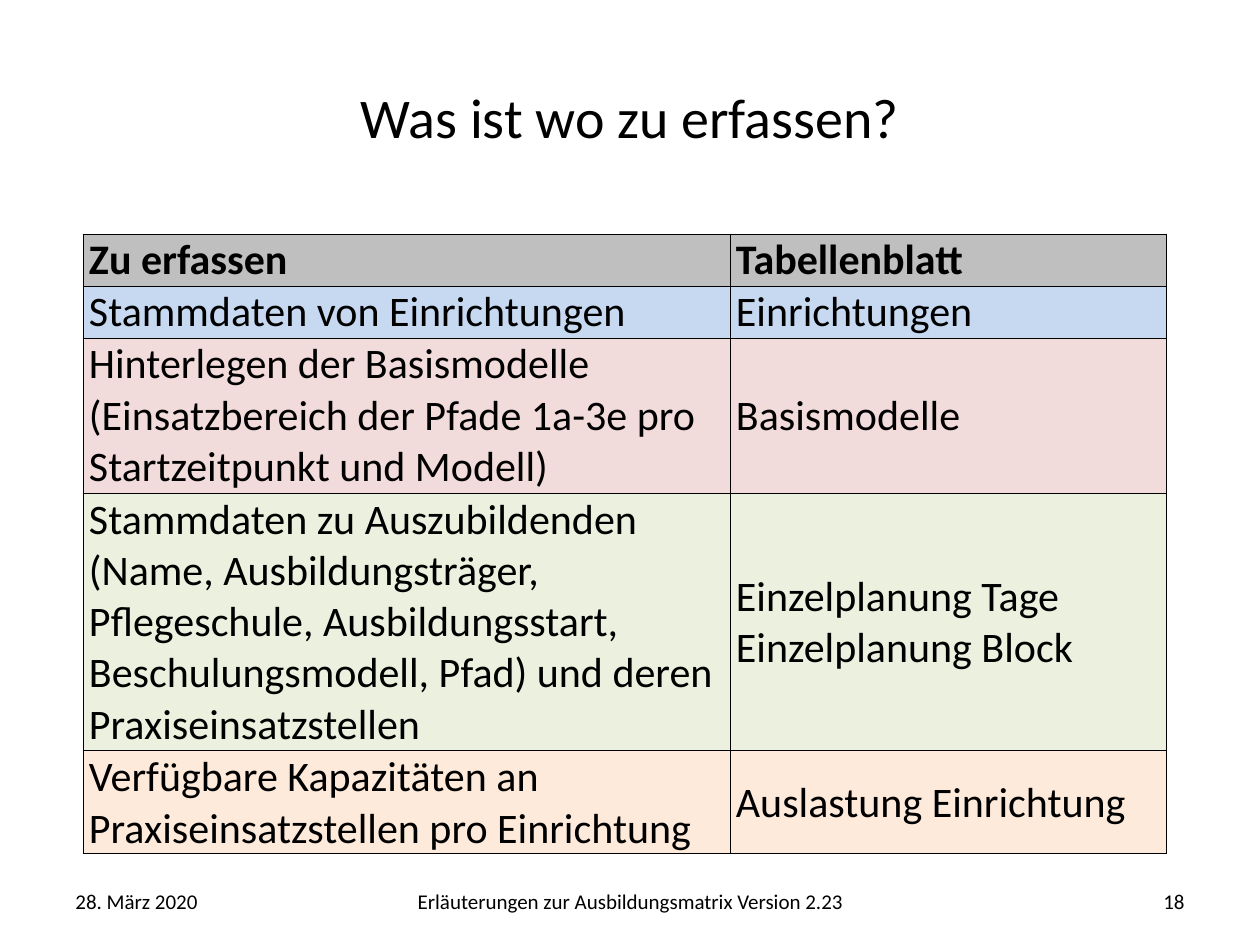
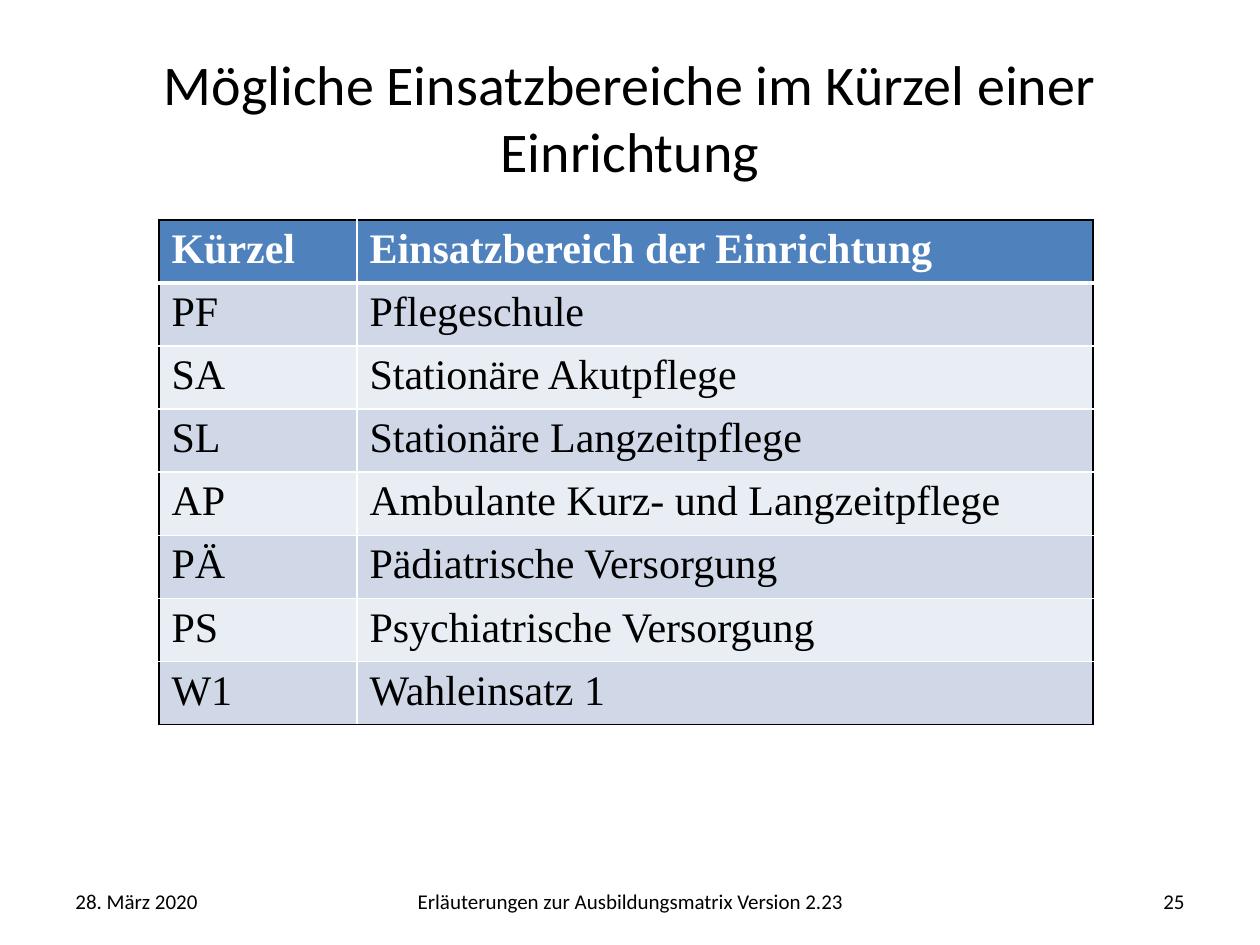
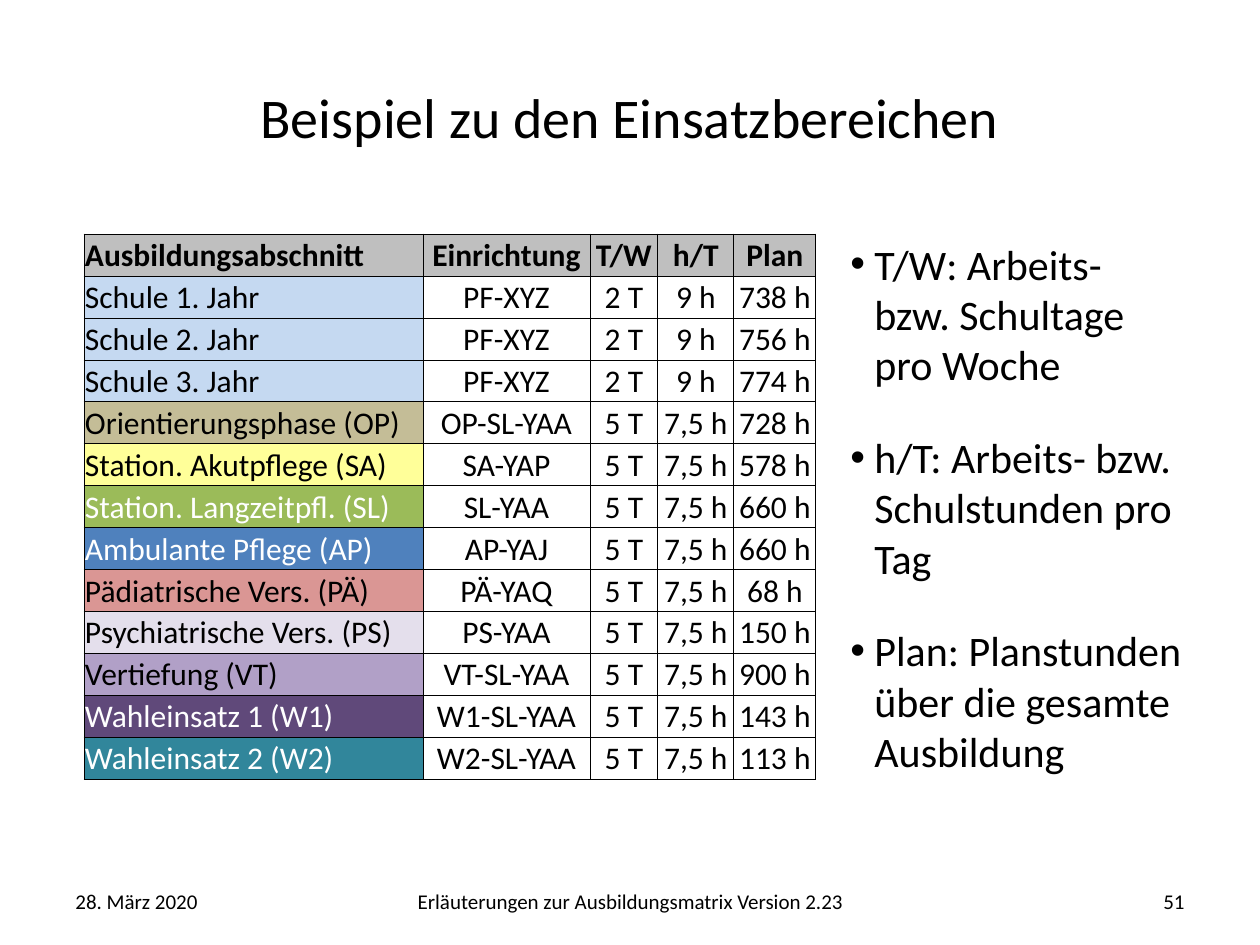
from lxml import etree
from pptx import Presentation
from pptx.dml.color import RGBColor
from pptx.enum.text import MSO_ANCHOR, PP_ALIGN
from pptx.oxml.ns import qn
from pptx.util import Pt

PX = 914400 / 126
LEFT, MID, RIGHT = PP_ALIGN.LEFT, PP_ALIGN.CENTER, PP_ALIGN.RIGHT
TOP, CENTER = MSO_ANCHOR.TOP, MSO_ANCHOR.MIDDLE

SANS, SERIF = "Calibri", "Times New Roman"
BLACK = RGBColor(0x00, 0x00, 0x00)
WHITE = RGBColor(0xFF, 0xFF, 0xFF)
GREY = RGBColor(0xBF, 0xBF, 0xBF)
BLUE = RGBColor(0x4F, 0x81, 0xBD)
SKY = RGBColor(0xC6, 0xD9, 0xF1)
ICE = RGBColor(0xC5, 0xD9, 0xF1)
ROSE = RGBColor(0xF2, 0xDC, 0xDB)
MINT = RGBColor(0xEB, 0xF1, 0xDE)
PEACH = RGBColor(0xFD, 0xEA, 0xDA)
STEEL = RGBColor(0xD0, 0xD8, 0xE8)
MIST = RGBColor(0xE9, 0xED, 0xF4)
SAND = RGBColor(0xC4, 0xBD, 0x97)
LEMON = RGBColor(0xFF, 0xFF, 0x99)
GREEN = RGBColor(0x9B, 0xBB, 0x59)
CORAL = RGBColor(0xDA, 0x96, 0x94)
LILAC = RGBColor(0xE4, 0xDF, 0xEC)
MAUVE = RGBColor(0xB1, 0xA0, 0xC7)
PLUM = RGBColor(0x60, 0x49, 0x7A)
TEAL = RGBColor(0x31, 0x86, 0x9B)
DARK = (GREEN, BLUE, PLUM, TEAL)

DATE = "28. März 2020"
FOOTER = "Erläuterungen zur Ausbildungsmatrix Version 2.23"

SHEETS = [
    ("Zu erfassen", "Tabellenblatt", GREY, 52),
    ("Stammdaten von Einrichtungen", "Einrichtungen", SKY, 52),
    ("Hinterlegen der Basismodelle (Einsatzbereich der Pfade 1a-3e pro "
     "Startzeitpunkt und Modell)", "Basismodelle", ROSE, 155),
    ("Stammdaten zu Auszubildenden (Name, Ausbildungsträger, Pflegeschule, "
     "Ausbildungsstart, Beschulungsmodell, Pfad) und deren "
     "Praxiseinsatzstellen",
     "Einzelplanung Tage\nEinzelplanung Block", MINT, 258),
    ("Verfügbare Kapazitäten an Praxiseinsatzstellen pro Einrichtung",
     "Auslastung Einrichtung", PEACH, 103),
]

CODES = [
    ("Kürzel", "Einsatzbereich der Einrichtung"),
    ("PF", "Pflegeschule"),
    ("SA", "Stationäre Akutpflege"),
    ("SL", "Stationäre Langzeitpflege"),
    ("AP", "Ambulante Kurz- und Langzeitpflege"),
    ("PÄ", "Pädiatrische Versorgung"),
    ("PS", "Psychiatrische Versorgung"),
    ("W1", "Wahleinsatz 1"),
]

HEADS = ("Ausbildungsabschnitt", "Einrichtung", "T/W", "h/T", "Plan")
SCHOOL, WORK = ("2 T", "9 h"), ("5 T", "7,5 h")
STAGES = [
    ("Schule 1. Jahr", "PF-XYZ", SCHOOL, "738 h", ICE),
    ("Schule 2. Jahr", "PF-XYZ", SCHOOL, "756 h", ICE),
    ("Schule 3. Jahr", "PF-XYZ", SCHOOL, "774 h", ICE),
    ("Orientierungsphase (OP)", "OP-SL-YAA", WORK, "728 h", SAND),
    ("Station. Akutpflege (SA)", "SA-YAP", WORK, "578 h", LEMON),
    ("Station. Langzeitpfl. (SL)", "SL-YAA", WORK, "660 h", GREEN),
    ("Ambulante Pflege (AP)", "AP-YAJ", WORK, "660 h", BLUE),
    ("Pädiatrische Vers. (PÄ)", "PÄ-YAQ", WORK, "68 h", CORAL),
    ("Psychiatrische Vers. (PS)", "PS-YAA", WORK, "150 h", LILAC),
    ("Vertiefung (VT)", "VT-SL-YAA", WORK, "900 h", MAUVE),
    ("Wahleinsatz 1 (W1)", "W1-SL-YAA", WORK, "143 h", PLUM),
    ("Wahleinsatz 2 (W2)", "W2-SL-YAA", WORK, "113 h", TEAL),
]

NOTES = [
    "T/W: Arbeits- bzw. Schultage pro Woche",
    "h/T: Arbeits- bzw. Schulstunden pro Tag",
    "Plan: Planstunden über die gesamte Ausbildung",
]


def px(num):
    """Turn px into EMU."""
    return round(num * PX)


def write(frame, lines, size, align=LEFT, font=SANS, color=BLACK, bold=False):
    """Fill a text frame with one paragraph per line."""
    frame.word_wrap = True
    for num, line in enumerate(lines):
        para = frame.add_paragraph() if num else frame.paragraphs[0]
        para.alignment = align
        run = para.add_run()
        run.text = line
        run.font.size = Pt(size)
        run.font.name = font
        run.font.bold = bold
        run.font.color.rgb = color


def indent(para, left, first=0):
    """Set the left margin and first-line indent of a paragraph."""
    props = para._p.get_or_add_pPr()
    props.set("marL", str(px(left)))
    props.set("indent", str(px(first)))
    return props


def label(slide, box, lines, size, align=LEFT, anchor=CENTER):
    """Add a text box and return its frame."""
    frame = slide.shapes.add_textbox(*map(px, box)).text_frame
    frame.vertical_anchor = anchor
    write(frame, lines, size, align)
    return frame


def bullets(slide, box, lines):
    """Add a bullet list."""
    frame = label(slide, box, lines, 24, anchor=TOP)
    for para in frame.paragraphs:
        para.space_before = Pt(24)
        props = indent(para, 24, -24)
        etree.SubElement(props, qn("a:buFont")).set("typeface", "Arial")
        etree.SubElement(props, qn("a:buChar")).set("char", "•")


def start(deck, title, number):
    """Add a slide with its title and footer line."""
    slide = deck.slides.add_slide(deck.slide_layouts[5])
    head = slide.shapes.title
    head.left, head.top, head.width, head.height = map(px, (63, 38, 1134, 157))
    head.text_frame.vertical_anchor = CENTER
    write(head.text_frame, [title], 32, MID)
    for left, width, text, align in ((63, 294, DATE, LEFT),
                                     (323, 615, FOOTER, MID),
                                     (903, 294, str(number), RIGHT)):
        label(slide, (left, 876, width, 50), [text], 12, align)
    return slide


def grid(slide, left, top, cols, rows):
    """Add a table with the given column widths and row heights."""
    box = map(px, (left, top, sum(cols), sum(rows)))
    table = slide.shapes.add_table(len(rows), len(cols), *box).table
    table.first_row = table.horz_banding = False
    for col, width in zip(table.columns, cols):
        col.width = px(width)
    for row, height in zip(table.rows, rows):
        row.height = px(height)
    return table


def edge(cell, side, color, width):
    """Draw one border of a cell."""
    line = etree.SubElement(cell._tc.get_or_add_tcPr(), qn("a:ln" + side))
    line.set("w", str(Pt(width)))
    fill = etree.SubElement(line, qn("a:solidFill"))
    etree.SubElement(fill, qn("a:srgbClr")).set("val", str(color))


def frame_all(table, inner, width, head):
    """Draw a black outer frame, inner lines and a line under the head."""
    last_row, last_col = len(table.rows) - 1, len(table.columns) - 1
    for num, row in enumerate(table.rows):
        for pos, cell in enumerate(row.cells):
            edge(cell, "L", inner if pos else BLACK, width)
            edge(cell, "R", inner if pos < last_col else BLACK, width)
            edge(cell, "T", inner if num else BLACK,
                 head if num == 1 else width)
            edge(cell, "B", inner if num < last_row else BLACK,
                 width if num else head)


def paint(cell, color):
    """Fill a cell, or leave it clear."""
    if color is None:
        cell.fill.background()
    else:
        cell.fill.solid()
        cell.fill.fore_color.rgb = color


def tight(cell):
    """Centre a cell vertically and shrink its margins."""
    cell.vertical_anchor = CENTER
    cell.margin_left = cell.margin_top = cell.margin_right = px(1)
    cell.margin_bottom = 0


def sheet_table(slide):
    """Show which sheet takes which data."""
    table = grid(slide, 83, 234, (647, 436), [row[3] for row in SHEETS])
    frame_all(table, BLACK, 0.5, 0.5)
    for num, (task, sheet, color, _) in enumerate(SHEETS):
        for cell, text in zip(table.rows[num].cells, (task, sheet)):
            tight(cell)
            paint(cell, color)
            write(cell.text_frame, text.split("\n"), 24, bold=num == 0)
            for para in cell.text_frame.paragraphs:
                indent(para, 5)


def code_table(slide):
    """List the short codes in bands."""
    table = grid(slide, 159, 220, (198, 736), [59] * len(CODES))
    frame_all(table, WHITE, 1, 3)
    for num, texts in enumerate(CODES):
        head = num == 0
        band = BLUE if head else STEEL if num % 2 else MIST
        for cell, text in zip(table.rows[num].cells, texts):
            paint(cell, band)
            write(cell.text_frame, [text], 24, font=SERIF,
                  color=WHITE if head else BLACK, bold=head)


def stage_table(slide):
    """List the stages with place, hours and plan."""
    rows = [(HEADS, [GREY] * len(HEADS))]
    for name, place, times, plan, color in STAGES:
        rows.append(((name, place, *times, plan), [color] + [None] * 4))
    table = grid(slide, 84, 234, (339, 167, 68, 76, 82), [42] * len(rows))
    frame_all(table, BLACK, 0.5, 0.5)
    for num, (texts, fills) in enumerate(rows):
        for pos, cell in enumerate(table.rows[num].cells):
            tight(cell)
            paint(cell, fills[pos])
            write(cell.text_frame, [texts[pos]], 18, MID if pos else LEFT,
                  color=WHITE if fills[pos] in DARK else BLACK, bold=num == 0)


def main():
    """Build the three slides."""
    deck = Presentation()
    deck.slide_width, deck.slide_height = px(1260), px(945)
    sheet_table(start(deck, "Was ist wo zu erfassen?", 18))
    code_table(start(
        deck, "Mögliche Einsatzbereiche im Kürzel einer Einrichtung", 25))
    slide = start(deck, "Beispiel zu den Einsatzbereichen", 51)
    bullets(slide, (838, 232, 359, 568), NOTES)
    stage_table(slide)
    deck.save("out.pptx")


if __name__ == "__main__":
    main()
